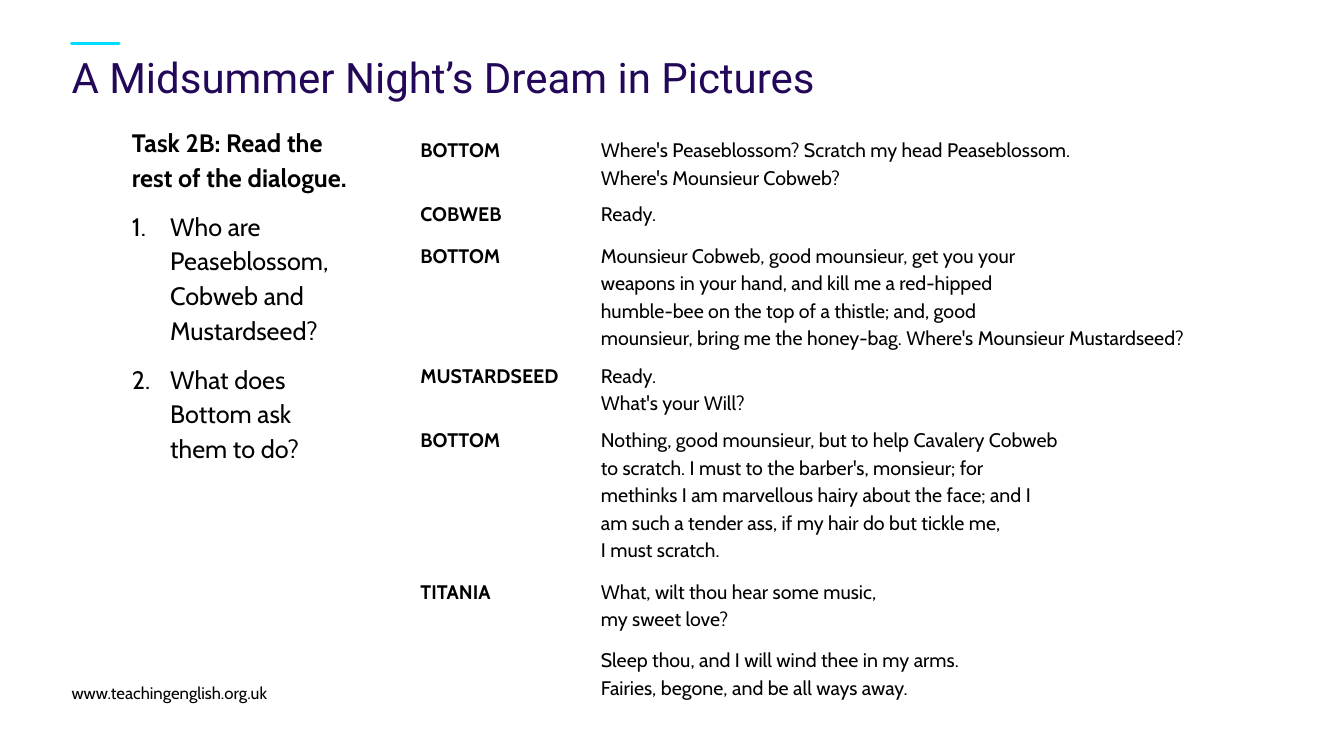
"""Build the dialogue slide for A Midsummer Night's Dream."""
from dataclasses import dataclass

from lxml import etree
from pptx import Presentation
from pptx import util as u
from pptx.dml import color
from pptx.enum import shapes, text
from pptx.oxml import ns


@dataclass(frozen=True)
class Theme:
    """Colours, fonts and type sizes."""
    ink: str = "000000"
    violet: str = "230859"
    cyan: str = "00DCFF"
    body: str = "Cabin"
    head: str = "Roboto"
    title: float = 30
    task: float = 18
    line: float = 14
    foot: float = 12


@dataclass(frozen=True)
class Box:
    """Place of a text box in inches."""
    left: float
    top: float
    width: float
    height: float
    pad: bool = False


@dataclass(frozen=True)
class Speech:
    """One speaker's turn and its row height."""
    name: str
    height: float
    verses: tuple


THEME = Theme()
TASKS = (
    "Who are Peaseblossom, Cobweb and Mustardseed?",
    "What does Bottom ask them to do?",
)
WIDTHS = (1.79, 6.6)
SCENE = (
    Speech("BOTTOM", 0.63, (
        "Where's Peaseblossom? Scratch my head Peaseblossom. \n"
        "Where's Mounsieur Cobweb?",)),
    Speech("COBWEB", 0.42, ("Ready.",)),
    Speech("BOTTOM", 1.19, (
        "Mounsieur Cobweb, good mounsieur, get you your \n"
        "weapons in your hand, and kill me a red-hipped \n"
        "humble-bee on the top of a thistle; and, good \n"
        "mounsieur, bring me the honey-bag. Where's Mounsieur Mustardseed?",)),
    Speech("MUSTARDSEED", 0.64, ("Ready. \nWhat's your Will?",)),
    Speech("BOTTOM", 1.5, (
        "Nothing, good mounsieur, but to help Cavalery Cobweb \n"
        "to scratch. I must to the barber's, monsieur; for \n"
        "methinks I am marvellous hairy about the face; and I \n"
        "am such a tender ass, if my hair do but tickle me, \n"
        "I must scratch.",)),
    Speech("TITANIA", 1.85, (
        "What, wilt thou hear some music, \nmy sweet love?",
        "Sleep thou, and I will wind thee in my arms. \n"
        "Fairies, begone, and be all ways away.")),
)


def style(para, size: float, bold: bool = False, face: str = THEME.body,
          ink: str = THEME.ink) -> None:
    """Set the font of a paragraph."""
    font = para.font
    font.name, font.size, font.bold = face, u.Pt(size), bold
    font.color.rgb = color.RGBColor.from_string(ink)


def space(para) -> None:
    """Set the body line and paragraph spacing."""
    para.line_spacing = 1.15
    para.space_after = u.Pt(10)


def number(para) -> None:
    """Number a paragraph with a hanging indent."""
    props = para._p.get_or_add_pPr()
    props.set("marL", str(u.Inches(0.38)))
    props.set("indent", str(u.Inches(-0.38)))
    mark = etree.SubElement(props, ns.qn("a:buAutoNum"))
    mark.set("type", "arabicPeriod")


def add_box(slide, box: Box):
    """Add a wrapping text box and return its frame."""
    frame = slide.shapes.add_textbox(
        u.Inches(box.left), u.Inches(box.top),
        u.Inches(box.width), u.Inches(box.height)).text_frame
    frame.word_wrap = True
    if not box.pad:
        frame.margin_left = frame.margin_right = 0
        frame.margin_top = frame.margin_bottom = 0
    return frame


def add_rule(slide) -> None:
    """Draw the accent line above the title."""
    rule = slide.shapes.add_connector(
        shapes.MSO_CONNECTOR.STRAIGHT, u.Inches(0.71), u.Inches(0.43),
        u.Inches(1.18), u.Inches(0.43))
    rule.line.color.rgb = color.RGBColor.from_string(THEME.cyan)
    rule.line.width = u.Pt(2.4)
    rule.line._get_or_add_ln().set("cap", "rnd")
    etree.SubElement(rule._element.spPr, ns.qn("a:effectLst"))


def add_tasks(slide) -> None:
    """Write the task heading and its numbered questions."""
    frame = add_box(slide, Box(1.21, 1.17, 2.37, 4.32, pad=True))
    head = frame.paragraphs[0]
    head.text = "Task 2B: Read the rest of the dialogue."
    space(head)
    style(head, THEME.task, bold=True)
    for task in TASKS:
        para = frame.add_paragraph()
        para.text = task
        number(para)
        space(para)
        style(para, THEME.task)


def fill_cell(cell, parts: tuple, bold: bool) -> None:
    """Write the paragraphs of a table cell."""
    cell.fill.background()
    cell.margin_left = cell.margin_right = u.Inches(0.07)
    cell.margin_top = cell.margin_bottom = 0
    frame = cell.text_frame
    for i, part in enumerate(parts):
        para = frame.add_paragraph() if i else frame.paragraphs[0]
        para.text = part
        space(para)
        style(para, THEME.line, bold)


def add_scene(slide) -> None:
    """Lay out the dialogue as a table."""
    table = slide.shapes.add_table(
        len(SCENE), len(WIDTHS), u.Inches(4.1), u.Inches(1.34),
        u.Inches(sum(WIDTHS)), u.Inches(sum(s.height for s in SCENE))).table
    table.first_row = table.horz_banding = False
    for col, width in zip(table.columns, WIDTHS):
        col.width = u.Inches(width)
    for row, turn in zip(table.rows, SCENE):
        row.height = u.Inches(turn.height)
        fill_cell(row.cells[0], (turn.name,), True)
        fill_cell(row.cells[1], turn.verses, False)


def main() -> None:
    """Build and save the slide."""
    deck = Presentation()
    deck.slide_width, deck.slide_height = u.Inches(13.33), u.Inches(7.5)
    slide = deck.slides.add_slide(deck.slide_layouts[6])
    add_rule(slide)
    title = add_box(slide, Box(0.71, 0.55, 11.97, 0.87)).paragraphs[0]
    title.text = "A Midsummer Night’s Dream in Pictures"
    title.line_spacing = u.Pt(33)
    style(title, THEME.title, face=THEME.head, ink=THEME.violet)
    foot = add_box(slide, Box(0.71, 6.77, 11.42, 0.2))
    foot.vertical_anchor = text.MSO_ANCHOR.BOTTOM
    foot.paragraphs[0].text = "www.teachingenglish.org.uk"
    style(foot.paragraphs[0], THEME.foot)
    add_tasks(slide)
    add_scene(slide)
    deck.save("out.pptx")


if __name__ == "__main__":
    main()
